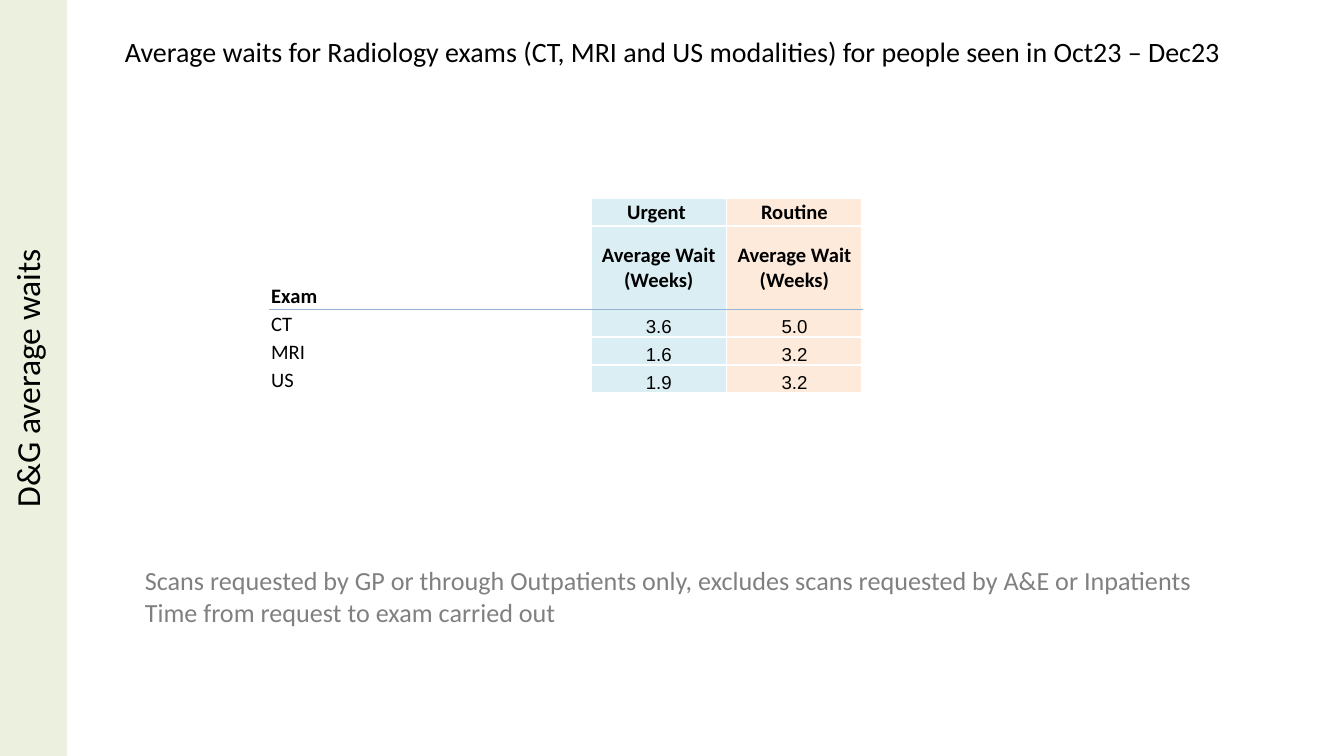
"""Build the slide of average radiology waits with its exam table."""
from lxml import etree
from pptx import Presentation
from pptx import util as u
from pptx.dml.color import RGBColor
from pptx.enum import shapes, text
from pptx.oxml import parse_xml
from pptx.oxml.ns import nsdecls, qn

Pt = u.Pt
TOP, MIDDLE, BOTTOM = text.MSO_ANCHOR.TOP, text.MSO_ANCHOR.MIDDLE, text.MSO_ANCHOR.BOTTOM
LEFT, CENTER = text.PP_ALIGN.LEFT, text.PP_ALIGN.CENTER


def color(value):
    return RGBColor.from_string(value)


def write(paragraph, words, size, align=LEFT, ink="000000", font="Calibri", bold=False):
    paragraph.alignment = align
    run = paragraph.add_run()
    run.text = words
    run.font.size = Pt(size)
    run.font.name = font
    run.font.bold = bold
    run.font.color.rgb = color(ink)


deck = Presentation()
deck.slide_width, deck.slide_height = Pt(720), Pt(405)
slide = deck.slides.add_slide(deck.slide_layouts[6])

band = slide.shapes.add_shape(shapes.MSO_SHAPE.RECTANGLE, Pt(0), Pt(0), Pt(36), Pt(405))
band.shadow.inherit = False
band.fill.solid()
band.fill.fore_color.rgb = color("EBF1DE")
band.line.fill.background()
band.text_frame.vertical_anchor = TOP
band.text_frame._txBody.bodyPr.set("vert", "vert270")
write(band.text_frame.paragraphs[0], "D&G average waits", 18, CENTER)

heading = "Average waits for Radiology exams (CT, MRI and US modalities) for people seen in Oct23 – Dec23"
scope = "Scans requested by GP or through Outpatients only, excludes scans requested by A&E or Inpatients"
timing = "Time from request to exam carried out"
for left, top, width, height, lines, size, ink in (
    (59.8, 15.2, 652, 25, [heading], 15, "000000"),
    (70.5, 299, 607, 41, [scope, timing], 14, "808080"),
):
    frame = slide.shapes.add_textbox(Pt(left), Pt(top), Pt(width), Pt(height)).text_frame
    frame.word_wrap = True
    for i, line in enumerate(lines):
        write(frame.add_paragraph() if i else frame.paragraphs[0], line, size, ink=ink)

waits = [
    ("", "Urgent ", "Routine"),
    ("Exam", "Average Wait (Weeks)", "Average Wait (Weeks)"),
    ("CT", "3.6", "5.0"),
    ("MRI", "1.6", "3.2"),
    ("US", "1.9", "3.2"),
]
column_fills = ("FFFFFF", "DBEEF4", "FDEADA")
table = slide.shapes.add_table(5, 3, Pt(144.6), Pt(106), Pt(317.4), Pt(104.6)).table
table.first_row = table.horz_banding = False
for column, width in zip(table.columns, (172, 72.7, 72.7)):
    column.width = Pt(width)
for row, height in zip(table.rows, (15, 44.6, 15, 15, 15)):
    row.height = Pt(height)

for r, entries in enumerate(waits):
    for c, entry in enumerate(entries):
        cell = table.cell(r, c)
        cell.margin_left = cell.margin_top = cell.margin_right = Pt(0.7)
        cell.margin_bottom = Pt(0)
        header = r < 2
        cell.vertical_anchor = MIDDLE if header and c else BOTTOM
        if header or c:
            cell.fill.solid()
            cell.fill.fore_color.rgb = color(column_fills[c])
        else:
            cell.fill.background()
        paragraph = cell.text_frame.paragraphs[0]
        if entry:
            figure = c > 0 and not header
            write(paragraph, entry, 10 if figure else 11, CENTER if c else LEFT,
                  font="Arial" if figure else "Calibri", bold=header)
        else:
            etree.SubElement(paragraph._p, qn("a:endParaRPr"), sz="1100")
        if r in (1, 2):
            side = "lnB" if r == 1 else "lnT"
            cell._tc.get_or_add_tcPr().insert(0, parse_xml(
                f'<a:{side} {nsdecls("a")} w="6350"><a:solidFill>'
                f'<a:srgbClr val="95B3D7"/></a:solidFill></a:{side}>'))

deck.save("out.pptx")
